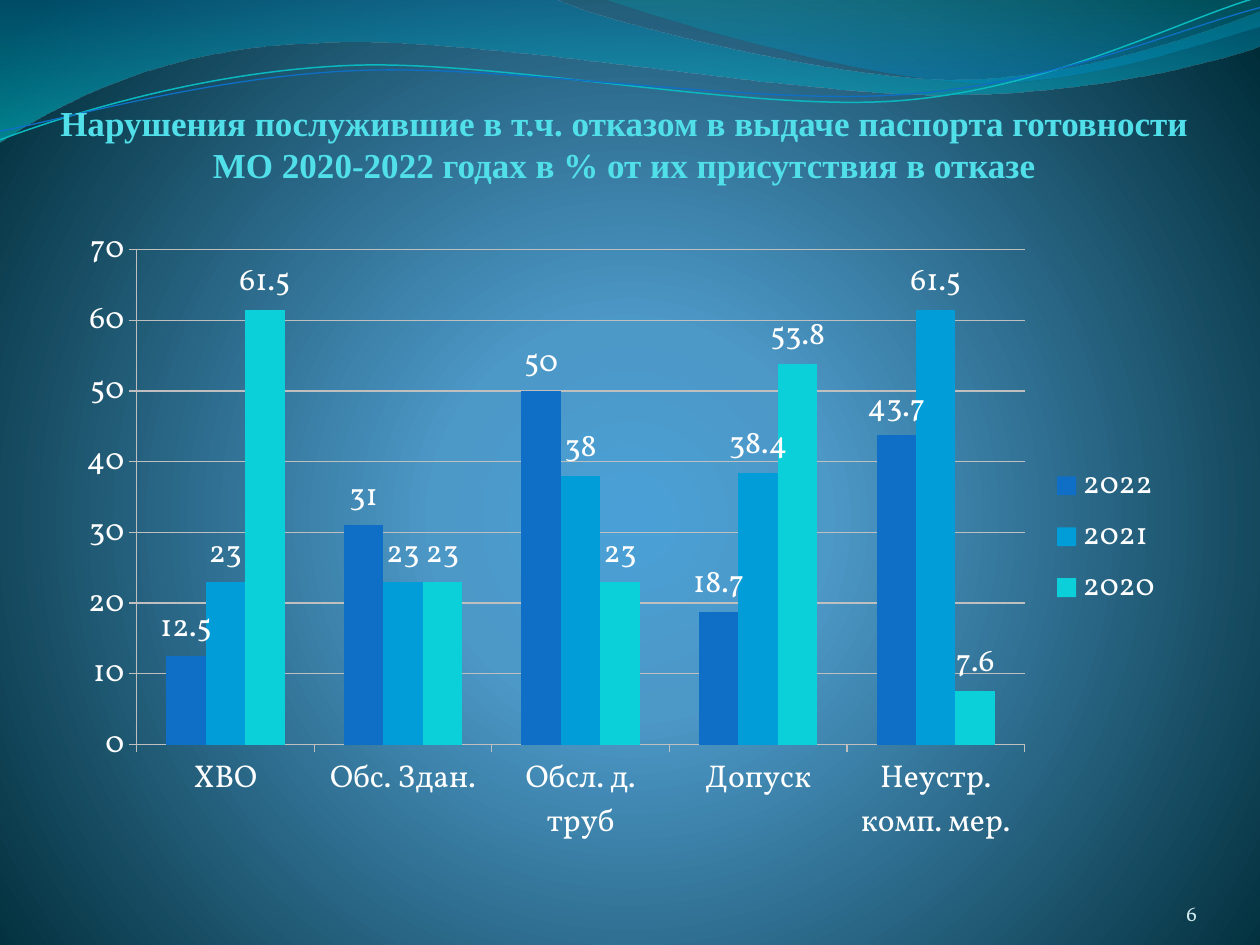
import math
from dataclasses import dataclass
from typing import NamedTuple, Optional

from lxml import etree
from pptx import Presentation
from pptx import util as u
from pptx.chart.data import CategoryChartData
from pptx.dml.color import RGBColor
from pptx.enum import chart as charts
from pptx.enum import text
from pptx.oxml.ns import qn


@dataclass(frozen=True)
class Theme:
    title: str = "51E0EA"
    number: str = "D1EAEE"
    chart_text: str = "FFFFFF"
    axis: str = "BFBFBF"
    title_font: str = "Times New Roman"
    body_font: str = "Vollkorn"
    title_size: float = 20
    number_size: float = 12
    chart_size: float = 18


class Stop(NamedTuple):
    position: int
    color: str
    opacity: int = 100


class Wave(NamedTuple):
    place: tuple
    start: tuple
    steps: list  # two numbers draw a line, six numbers a cubic curve
    stops: Optional[list] = None
    line: Optional[tuple] = None
    turn: float = 0


class Label(NamedTuple):
    words: str
    place: tuple
    insets: tuple
    align: text.PP_ALIGN
    font: str
    size: float
    color: str
    bold: bool = False


class Series(NamedTuple):
    name: str
    values: list
    color: str


THEME = Theme()
BACKGROUND = [Stop(0, "4AA0D6"), Stop(25, "4C98C7"), Stop(100, "002C38")]

WAVES = [
    Wave((-0.01, -0.01, 10.02, 1.14), (0, 0), [
        (4.4, -0.01), (4.76, 0.17, 6.64, 0.63, 7.58, 0.63),
        (8.53, 0.63, 9.58, 0.26, 10, 0.09), (10.01, 0.36),
        (9.83, 0.44, 8.7, 0.76, 7.46, 0.75),
        (6.22, 0.75, 3.82, 0.28, 2.57, 0.34),
        (1.29, 0.36, 0.46, 0.83, -0.01, 1.13), (0, 0),
    ], stops=[Stop(0, "0074A1", 45), Stop(100, "00C6CF", 55)]),
    Wave((4.79, -0.01, 5.21, 0.7), (4.79, -0.01), [
        (5.09, 0.11, 6.82, 0.62, 7.69, 0.65),
        (8.56, 0.69, 9.61, 0.32, 10, 0.21), (10, 0), (4.79, -0.01),
    ], stops=[Stop(0, "00A1A9", 30), Stop(80, "008BBF", 45)]),
    Wave((-0.02, 0.22, 10.02, 0.71), (0, 1.11), [
        (0.48, 0.93, 1.58, 0.57, 2.77, 0.52),
        (3.95, 0.47, 5.93, 0.89, 7.13, 0.8),
        (8.33, 0.71, 9.38, 0.15, 9.98, -0.02),
    ], line=("0AB8BF", 0.85), turn=-2.7),
    Wave((-0.02, 0.3, 10.03, 0.58), (0, 1.04), [
        (0.47, 0.96, 1.64, 0.61, 2.83, 0.56),
        (4.03, 0.51, 5.97, 0.84, 7.17, 0.75),
        (8.36, 0.67, 9.41, 0.21, 10, 0.06),
    ], line=("0F6FC6", 0.75), turn=-2.7),
]

LABELS = [
    Label("Нарушения послужившие в т.ч. отказом в выдаче паспорта готовности "
          "МО 2020-2022 годах в % от их присутствия в отказе",
          (0.36, 0.37, 9.21, 1.1), (0, 0, 0.02, 0), text.PP_ALIGN.CENTER,
          THEME.title_font, THEME.title_size, THEME.title, True),
    Label("6", (8.67, 6.95, 0.83, 0.4), (0, 0, 0, 0), text.PP_ALIGN.RIGHT,
          THEME.body_font, THEME.number_size, THEME.number),
]

CATEGORIES = ["ХВО", "Обс. Здан.", "Обсл. д. труб", "Допуск", "Неустр. комп. мер."]
SERIES = [
    Series("2022", [12.5, 31, 50, 18.7, 43.7], "0F6FC6"),
    Series("2021", [23, 23, 38, 38.4, 61.5], "009DD9"),
    Series("2020", [61.5, 23, 23, 53.8, 7.6], "0BD0D9"),
]


def rgb(color: str) -> RGBColor:
    return RGBColor.from_string(color)


def set_gradient(owner, element, stops: list, radial: bool = False) -> None:
    """Gradient with opacity: vertical, or a circle centred below the middle."""
    owner.fill.gradient()
    gradient = element.find(".//" + qn("a:gradFill"))
    for child in list(gradient):
        gradient.remove(child)
    stop_list = etree.SubElement(gradient, qn("a:gsLst"))
    for stop in stops:
        mark = etree.SubElement(stop_list, qn("a:gs"), pos=str(stop.position * 1000))
        color = etree.SubElement(mark, qn("a:srgbClr"), val=stop.color)
        if stop.opacity < 100:
            etree.SubElement(color, qn("a:alpha"), val=str(stop.opacity * 1000))
    if radial:
        circle = etree.SubElement(gradient, qn("a:path"), path="circle")
        etree.SubElement(circle, qn("a:fillToRect"),
                         l="10000", t="110000", r="10000", b="100000")
    else:
        etree.SubElement(gradient, qn("a:lin"), ang="5400000", scaled="0")


def to_local(wave: Wave, x: float, y: float) -> tuple:
    """Page point to a point inside the wave's unturned box."""
    left, top, width, height = wave.place
    angle = math.radians(-wave.turn)
    dx, dy = x - left - width / 2, y - top - height / 2
    return (u.Inches(dx * math.cos(angle) - dy * math.sin(angle) + width / 2),
            u.Inches(dx * math.sin(angle) + dy * math.cos(angle) + height / 2))


def set_outline(shape, wave: Wave) -> None:
    """Write the wave as true cubic curves."""
    outline = shape.element.find(".//" + qn("a:pathLst"))[0]
    for child in list(outline):
        outline.remove(child)
    outline.set("w", str(u.Inches(wave.place[2])))
    outline.set("h", str(u.Inches(wave.place[3])))
    for index, step in enumerate([wave.start] + wave.steps):
        tag = "a:moveTo" if index == 0 else "a:lnTo" if len(step) == 2 else "a:cubicBezTo"
        segment = etree.SubElement(outline, qn(tag))
        for pair in zip(step[::2], step[1::2]):
            x, y = to_local(wave, *pair)
            etree.SubElement(segment, qn("a:pt"), x=str(x), y=str(y))
    if wave.line is None:
        etree.SubElement(outline, qn("a:close"))


def draw_wave(page, wave: Wave) -> None:
    left, top, width, height = map(u.Inches, wave.place)
    builder = page.shapes.build_freeform(left, top)
    builder.add_line_segments([(left + width, top + height)], close=False)
    shape = builder.convert_to_shape()
    set_outline(shape, wave)
    shape.rotation = wave.turn
    shape.shadow.inherit = False
    if wave.line:
        color, thickness = wave.line
        shape.fill.background()
        shape.line.color.rgb = rgb(color)
        shape.line.width = u.Pt(thickness)
    else:
        set_gradient(shape, shape.element, wave.stops)
        shape.line.fill.background()


def style_font(font, name: str, size: float, color: str, bold: bool = False) -> None:
    font.name, font.size, font.bold = name, u.Pt(size), bold
    font.color.rgb = rgb(color)


def draw_label(page, label: Label) -> None:
    box = page.shapes.add_textbox(*map(u.Inches, label.place))
    frame = box.text_frame
    frame.word_wrap = True
    frame.vertical_anchor = text.MSO_ANCHOR.BOTTOM
    (frame.margin_left, frame.margin_top,
     frame.margin_right, frame.margin_bottom) = map(u.Inches, label.insets)
    para = frame.paragraphs[0]
    para.alignment = label.align
    span = para.add_run()
    span.text = label.words
    style_font(span.font, label.font, label.size, label.color, label.bold)


def draw_chart(page) -> None:
    data = CategoryChartData()
    data.categories = CATEGORIES
    for item in SERIES:
        data.add_series(item.name, item.values)
    chart = page.shapes.add_chart(
        charts.XL_CHART_TYPE.COLUMN_CLUSTERED,
        *map(u.Inches, (0.51, 1.7, 8.82, 5.12)), data).chart
    style_font(chart.font, THEME.body_font, THEME.chart_size, THEME.chart_text)
    chart.has_title = False
    chart.has_legend = True
    chart.legend.position = charts.XL_LEGEND_POSITION.RIGHT
    chart.legend.include_in_layout = False
    # Axes
    scale = chart.value_axis
    scale.has_major_gridlines = True
    lines = [scale.major_gridlines.format.line]
    for axis in (scale, chart.category_axis):
        axis.major_tick_mark = charts.XL_TICK_MARK.OUTSIDE
        lines.append(axis.format.line)
    for line in lines:
        line.color.rgb = rgb(THEME.axis)
        line.width = u.Pt(0.75)
    # Columns and their values
    plot = chart.plots[0]
    plot.gap_width, plot.overlap, plot.vary_by_categories = 150, 0, False
    for item, column in zip(SERIES, plot.series):
        column.format.fill.solid()
        column.format.fill.fore_color.rgb = rgb(item.color)
        column.data_labels.show_value = True
        column.data_labels.position = charts.XL_LABEL_POSITION.OUTSIDE_END


if __name__ == "__main__":
    deck = Presentation()
    deck.slide_width, deck.slide_height = u.Inches(10), u.Inches(7.5)
    page = deck.slides.add_slide(deck.slide_layouts[6])
    set_gradient(page.background, page.element, BACKGROUND, radial=True)
    for wave in WAVES:
        draw_wave(page, wave)
    for label in LABELS:
        draw_label(page, label)
    draw_chart(page)
    deck.save("out.pptx")
